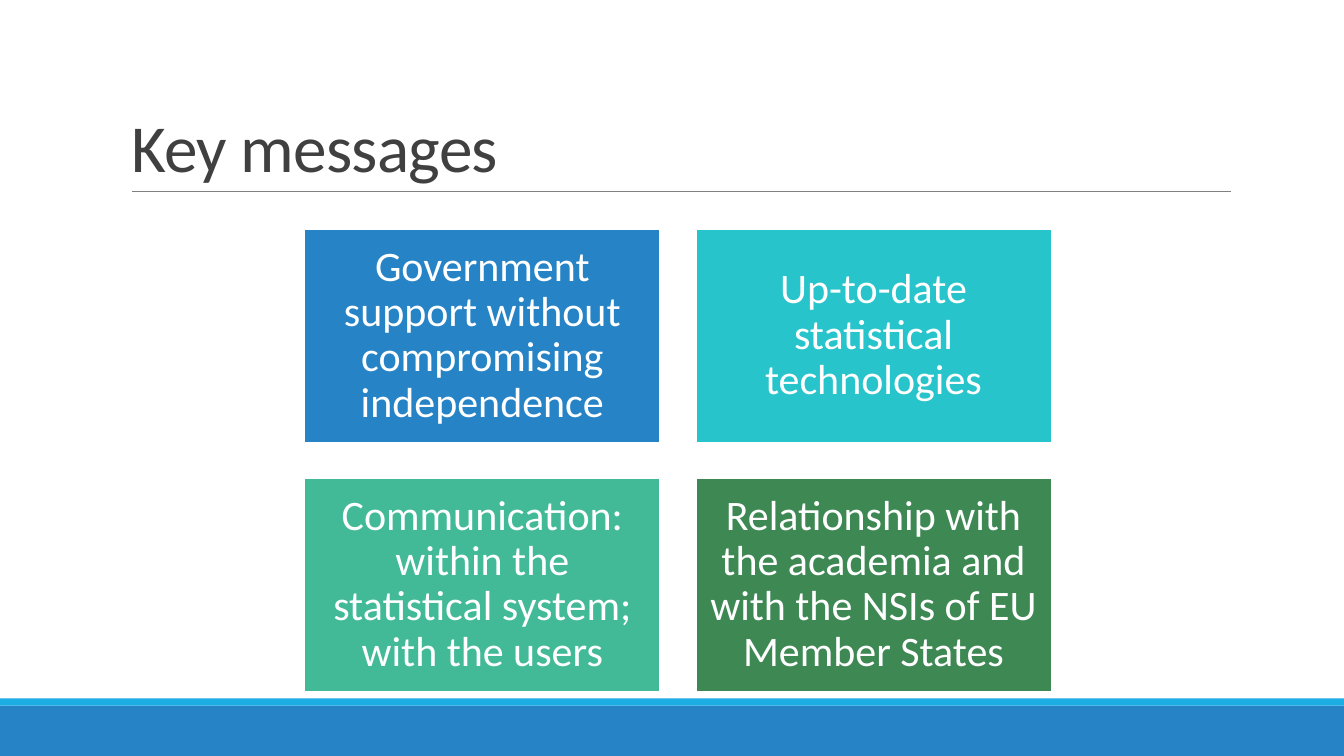
from pptx import Presentation
from pptx.dml.color import RGBColor
from pptx.enum.shapes import MSO_CONNECTOR as Connector, MSO_SHAPE as Shape
from pptx.enum.text import MSO_ANCHOR as Anchor, MSO_AUTO_SIZE as AutoSize, PP_ALIGN as Align
from pptx.oxml.ns import qn
from pptx.util import Pt
from lxml.etree import SubElement

PX = 9144  # EMU per px, 100 px to the inch
WIDTH, HEIGHT = 1333, 750


def px(*lengths):
    return [length * PX for length in lengths]


def color(hex_string):
    return RGBColor.from_string(hex_string)


class SlideBuilder:
    font = "Calibri"
    white = "FFFFFF"
    title_color = "404040"
    rule_color = "808080"

    def __init__(self, slide):
        self.slide = slide

    def set_text(self, text_frame, text, size, hex_color, align, anchor, line_spacing):
        text_frame.text = text
        text_frame.word_wrap = True
        text_frame.auto_size = AutoSize.NONE
        text_frame.vertical_anchor = anchor
        paragraph = text_frame.paragraphs[0]
        paragraph.alignment = align
        paragraph.line_spacing = line_spacing
        run = paragraph.runs[0]
        run.font.name = self.font
        run.font.size = Pt(size)
        run.font.color.rgb = color(hex_color)
        return run

    def title(self, text, left, top, width, height):
        shape = self.slide.shapes.title
        shape.left, shape.top, shape.width, shape.height = px(left, top, width, height)
        run = self.set_text(shape.text_frame, text, 48, self.title_color,
                            Align.LEFT, Anchor.BOTTOM, 0.85)
        run._r.get_or_add_rPr().set("spc", "-50")

    def bar(self, left, top, width, height, fill):
        shape = self.slide.shapes.add_shape(Shape.RECTANGLE, *px(left, top, width, height))
        shape.shadow.inherit = False
        shape.fill.solid()
        shape.fill.fore_color.rgb = color(fill)
        shape.line.fill.background()
        return shape

    def tile(self, text, left, top, width, height, fill):
        shape = self.bar(left, top, width, height, fill)
        shape.line.color.rgb = color(self.white)
        shape.line.width = Pt(1.25)
        text_frame = shape.text_frame
        text_frame.margin_left = text_frame.margin_right = 12 * PX
        text_frame.margin_top = text_frame.margin_bottom = 12 * PX
        self.set_text(text_frame, text, 30, self.white, Align.CENTER, Anchor.MIDDLE, 0.9)

    def rule(self, left, right, top):
        connector = self.slide.shapes.add_connector(
            Connector.STRAIGHT, *px(left, top, right, top))
        connector.line.color.rgb = color(self.rule_color)
        connector.line.width = Pt(0.5)
        SubElement(connector._element.spPr, qn("a:effectLst"))


def main():
    presentation = Presentation()
    presentation.slide_width, presentation.slide_height = px(WIDTH, HEIGHT)
    title_only = presentation.slide_layouts[5]
    builder = SlideBuilder(presentation.slides.add_slide(title_only))

    # Footer bands
    builder.bar(0, 700, WIDTH, 50, "2683C6")
    builder.bar(0, 693, WIDTH, 7, "1CADE4")

    # Title and its rule
    builder.rule(131, 1221, 190)
    builder.title("Key messages", 120, 31, 1100, 159)

    # Two by two grid of messages
    messages = [
        ("Government support without compromising independence", "2683C6"),
        ("Up-to-date statistical technologies", "28C4CC"),
        ("Communication: within the statistical system; with the users", "42BA97"),
        ("Relationship with the academia and with the NSIs of EU Member States", "3E8853"),
    ]
    tile_width, tile_height, gap = 353, 212, 35
    for index, (text, fill) in enumerate(messages):
        row, column = divmod(index, 2)
        builder.tile(text, 302 + column * (tile_width + gap),
                     227 + row * (tile_height + gap), tile_width, tile_height, fill)

    presentation.save("out.pptx")


if __name__ == "__main__":
    main()
